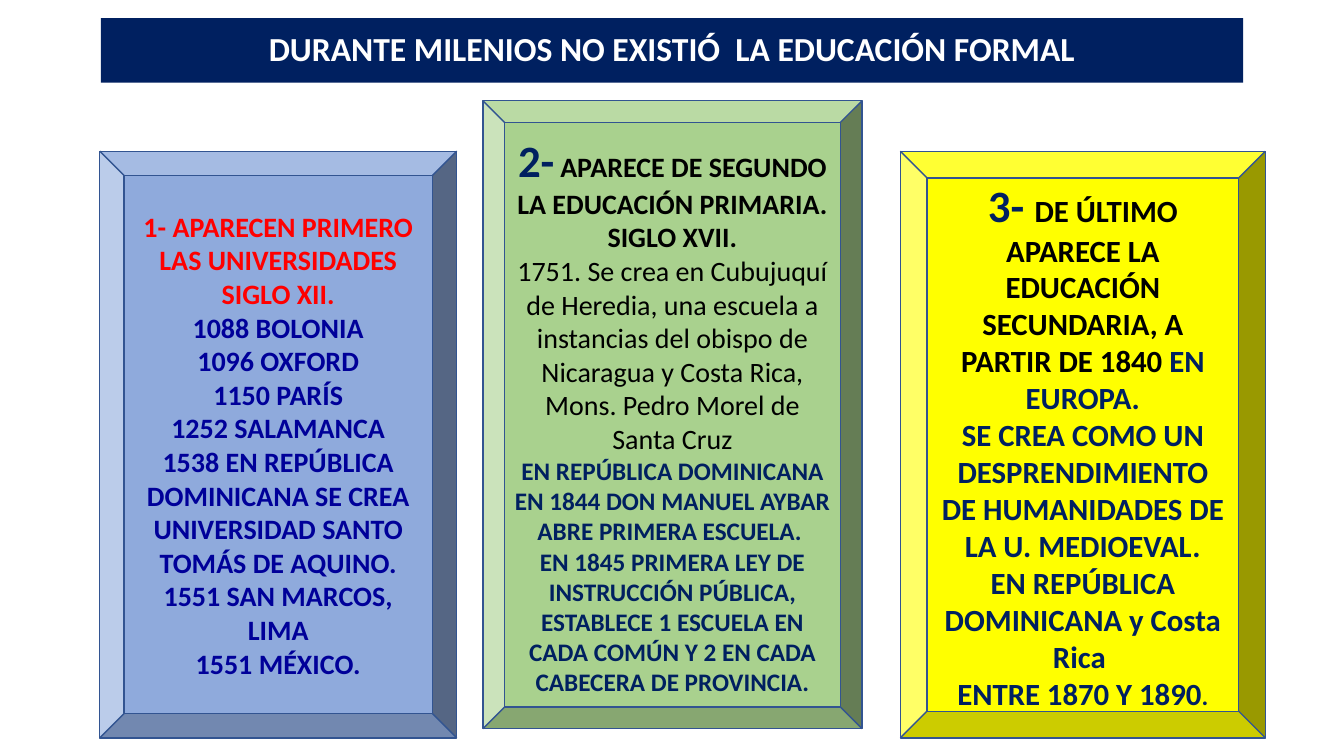
from pptx import Presentation
from pptx import util as u
from pptx.dml.color import RGBColor
from pptx.enum import shapes, text

NAVY = RGBColor(0x00, 0x20, 0x60)
WHITE = RGBColor(0xFF, 0xFF, 0xFF)
BLACK = RGBColor(0x00, 0x00, 0x00)
RED = RGBColor(0xFF, 0x00, 0x00)
INDIGO = RGBColor(0x00, 0x00, 0x99)
BLUE = RGBColor(0x8F, 0xAA, 0xDC)
GREEN = RGBColor(0xA9, 0xD1, 0x8E)
YELLOW = RGBColor(0xFF, 0xFF, 0x00)
EDGE = RGBColor(0x32, 0x54, 0x91)

UNIVERSITIES = [
    [("1- APARECEN PRIMERO LAS UNIVERSIDADES SIGLO XII.", 20, RED)],
] + [[(milestone, 20, INDIGO)] for milestone in (
    "1088 BOLONIA",
    "1096 OXFORD",
    "1150 PARÍS",
    "1252 SALAMANCA",
    "1538 EN REPÚBLICA DOMINICANA SE CREA UNIVERSIDAD SANTO TOMÁS DE AQUINO.",
    "1551 SAN MARCOS, LIMA",
    "1551 MÉXICO.",
)]
PRIMARY = [
    [("2-", 32, NAVY), (" ", 18, NAVY),
     ("APARECE DE SEGUNDO LA EDUCACIÓN PRIMARIA. SIGLO XVII.", 20, BLACK)],
    [("1751. Se crea en Cubujuquí de Heredia, una escuela a instancias del obispo "
      "de Nicaragua y Costa Rica, Mons. Pedro Morel de Santa Cruz", 20, BLACK, False)],
    [("EN REPÚBLICA DOMINICANA EN 1844 DON MANUEL AYBAR ABRE PRIMERA ESCUELA. ", 18, NAVY)],
    [("EN 1845 PRIMERA LEY DE INSTRUCCIÓN PÚBLICA, ESTABLECE 1 ESCUELA EN CADA "
      "COMÚN Y 2 EN CADA CABECERA DE PROVINCIA.", 18, NAVY)],
]
SECONDARY = [
    [("3- ", 32, NAVY),
     ("DE ÚLTIMO APARECE LA EDUCACIÓN SECUNDARIA, A PARTIR DE 1840 ", 22, BLACK),
     ("EN EUROPA.", 22, NAVY)],
    [("SE CREA COMO UN DESPRENDIMIENTO DE HUMANIDADES DE LA U. MEDIOEVAL.", 22, NAVY)],
    [("EN REPÚBLICA DOMINICANA y Costa Rica ", 22, NAVY)],
    [("ENTRE 1870 Y 1890", 22, NAVY), (".", 18, NAVY)],
]


class Deck:
    """Holds the style and the current slide, and draws its elements."""

    font_name = "Calibri"

    def __init__(self):
        self.presentation = Presentation()
        self.presentation.slide_width = u.Inches(13.33)
        self.presentation.slide_height = u.Inches(7.5)
        self.slide = self.presentation.slides.add_slide(self.presentation.slide_layouts[6])

    def style(self, font, size, color, bold=True):
        font.name = self.font_name
        font.size = u.Pt(size)
        font.bold = bold
        font.color.rgb = color

    def fill_text(self, frame, paragraphs):
        frame.word_wrap = True
        frame.vertical_anchor = text.MSO_ANCHOR.MIDDLE
        for index, runs in enumerate(paragraphs):
            paragraph = frame.add_paragraph() if index else frame.paragraphs[0]
            paragraph.alignment = text.PP_ALIGN.CENTER
            for words, *look in runs:
                run = paragraph.add_run()
                run.text = words
                self.style(paragraph.font if len(runs) == 1 else run.font, *look)

    def block(self, kind, box, fill, paragraphs):
        block = self.slide.shapes.add_shape(kind, *map(u.Inches, box))
        block.shadow.inherit = False
        block.fill.solid()
        block.fill.fore_color.rgb = fill
        self.fill_text(block.text_frame, paragraphs)
        return block

    def banner(self, box, title):
        banner = self.block(shapes.MSO_SHAPE.RECTANGLE, box, NAVY, [[(title, 24, WHITE)]])
        banner.line.fill.background()
        banner.text_frame.margin_bottom = u.Inches(0.1)

    def panel(self, box, depth, fill, paragraphs):
        panel = self.block(shapes.MSO_SHAPE.BEVEL, box, fill, paragraphs)
        panel.adjustments[0] = depth
        panel.line.color.rgb = EDGE
        panel.line.width = u.Pt(1)


def main():
    deck = Deck()
    deck.banner((1, 0.18, 11.33, 0.64), "DURANTE MILENIOS NO EXISTIÓ  LA EDUCACIÓN FORMAL")
    deck.panel((0.99, 1.5, 3.54, 5.82), 0.068, BLUE, UNIVERSITIES)
    deck.panel((4.79, 1, 3.76, 6.23), 0.057, GREEN, PRIMARY)
    deck.panel((8.93, 1.5, 3.62, 5.82), 0.073, YELLOW, SECONDARY)
    deck.presentation.save("out.pptx")


if __name__ == "__main__":
    main()
